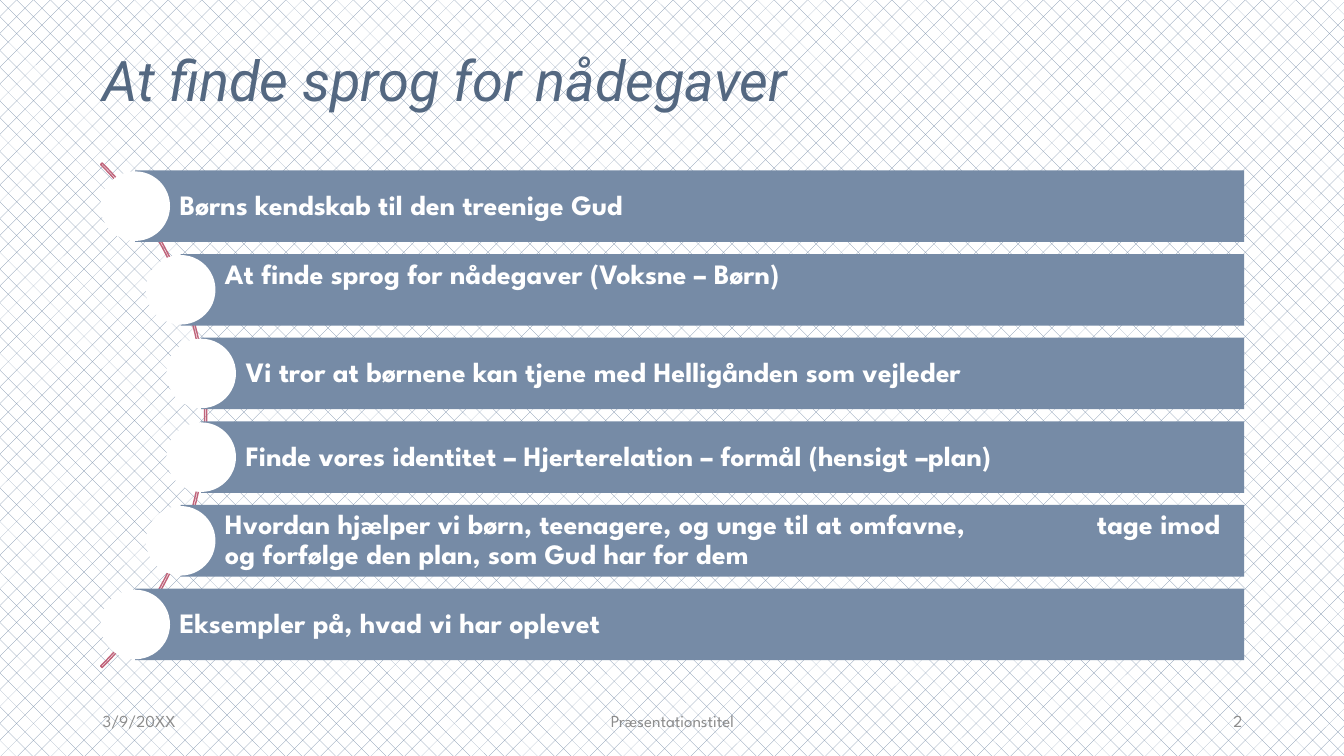
import math
from dataclasses import dataclass

from lxml import etree
from pptx import Presentation
from pptx.dml.color import RGBColor
from pptx.enum import dml, shapes, text
from pptx.oxml import ns
from pptx.util import Inches, Pt


@dataclass(frozen=True)
class Theme:
    title_font: str = "Roboto"
    body_font: str = "League Spartan"
    title_size: int = 40
    bar_size: int = 20
    footer_size: int = 12
    title: RGBColor = RGBColor.from_string("546881")
    bar: RGBColor = RGBColor.from_string("768BA6")
    arc: RGBColor = RGBColor.from_string("C0637A")
    footer: RGBColor = RGBColor.from_string("8C8C8C")
    white: RGBColor = RGBColor.from_string("FFFFFF")


theme = Theme()
LEFT, CENTER, RIGHT = text.PP_ALIGN.LEFT, text.PP_ALIGN.CENTER, text.PP_ALIGN.RIGHT


def write(shape, words, font, size, color, align=LEFT, spacing=1.0):
    """Put one vertically centred paragraph in the shape and return it."""
    frame = shape.text_frame
    frame.word_wrap = True
    frame.vertical_anchor = text.MSO_ANCHOR.MIDDLE
    paragraph = frame.paragraphs[0]
    paragraph.text = words
    paragraph.alignment = align
    paragraph.line_spacing = spacing
    paragraph.font.name = font
    paragraph.font.size = Pt(size)
    paragraph.font.color.rgb = color
    return paragraph


def add_plain_shape(kind, left, top, width, height, fill=None):
    """Add a shape without shadow or outline; lengths are in inches."""
    shape = slide.shapes.add_shape(
        kind, Inches(left), Inches(top), Inches(width), Inches(height))
    shape.shadow.inherit = False
    shape.line.fill.background()
    if fill is None:
        shape.fill.background()
    else:
        shape.fill.solid()
        shape.fill.fore_color.rgb = fill
    return shape


presentation = Presentation()
presentation.slide_width = Inches(13.33)
presentation.slide_height = Inches(7.5)
slide = presentation.slides.add_slide(presentation.slide_layouts[6])

background = slide.background.fill
background.patterned()
background.pattern = dml.MSO_PATTERN.DOTTED_DIAMOND
background.fore_color.rgb = theme.bar
background.back_color.rgb = theme.white

title = slide.shapes.add_textbox(Inches(0.92), Inches(0.4), Inches(11.5), Inches(0.86))
paragraph = write(title, "At finde sprog for nådegaver", theme.title_font,
                  theme.title_size, theme.title, spacing=0.9)
paragraph.font.italic = True

# The circles sit on a curve around the centre of the arc
ARC_X, ARC_Y, ARC_SIZE = -1.49, 4.12, 7.08
CURVE_RADIUS = 3.51
arc = add_plain_shape(shapes.MSO_SHAPE.BLOCK_ARC, ARC_X - ARC_SIZE / 2,
                      ARC_Y - ARC_SIZE / 2, ARC_SIZE, ARC_SIZE)
for index, value in enumerate((189, 27, 0.003)):
    arc.adjustments[index] = value
arc.line.color.rgb = theme.arc
arc.line.width = Pt(1)

BAR_RIGHT, BAR_HEIGHT, BAR_STEP, CIRCLE = 12.34, 0.71, 0.83, 0.69
TAB_STOP = 8.65
# Wording and bottom inset; the second text is set high in its bar
topics = [
    ("Børns kendskab til den treenige Gud", 0.06),
    ("At finde sprog for nådegaver (Voksne – Børn)", 0.34),
    ("Vi tror at børnene kan tjene med Helligånden som vejleder", 0.06),
    ("Finde vores identitet – Hjerterelation – formål (hensigt –plan)", 0.06),
    ("Hvordan hjælper vi børn, teenagere, og unge til at omfavne,\t"
     "tage imod og forfølge den plan, som Gud har for dem", 0.06),
    ("Eksempler på, hvad vi har oplevet", 0.06),
]
for index, (words, bottom_inset) in enumerate(topics):
    offset = BAR_STEP * (index - (len(topics) - 1) / 2)
    middle_y = ARC_Y + offset
    left = ARC_X + math.sqrt(CURVE_RADIUS ** 2 - offset ** 2)

    bar = add_plain_shape(shapes.MSO_SHAPE.RECTANGLE, left, middle_y - BAR_HEIGHT / 2,
                          BAR_RIGHT - left, BAR_HEIGHT, theme.bar)
    frame = bar.text_frame
    frame.margin_left = Inches(0.44)
    frame.margin_top = frame.margin_right = Inches(0.06)
    frame.margin_bottom = Inches(bottom_inset)
    paragraph = write(bar, words, theme.body_font, theme.bar_size, theme.white, spacing=0.9)
    paragraph.font.bold = True
    if "\t" in words:
        properties = paragraph.font._element.getparent()
        tabs = etree.Element(ns.qn("a:tabLst"))
        etree.SubElement(tabs, ns.qn("a:tab"), pos=str(Inches(TAB_STOP)), algn="l")
        properties.insert(properties.index(paragraph.font._element), tabs)

    add_plain_shape(shapes.MSO_SHAPE.OVAL, left - CIRCLE / 2, middle_y - CIRCLE / 2,
                    CIRCLE, CIRCLE, theme.white)

footers = [
    ("3/9/20XX", 0.92, 3, LEFT),
    ("Præsentationstitel", 4.42, 4.5, CENTER),
    ("2", 9.42, 3, RIGHT),
]
for words, left, width, align in footers:
    footer = slide.shapes.add_textbox(Inches(left), Inches(6.95), Inches(width), Inches(0.4))
    write(footer, words, theme.body_font, theme.footer_size, theme.footer, align)

presentation.save("out.pptx")
